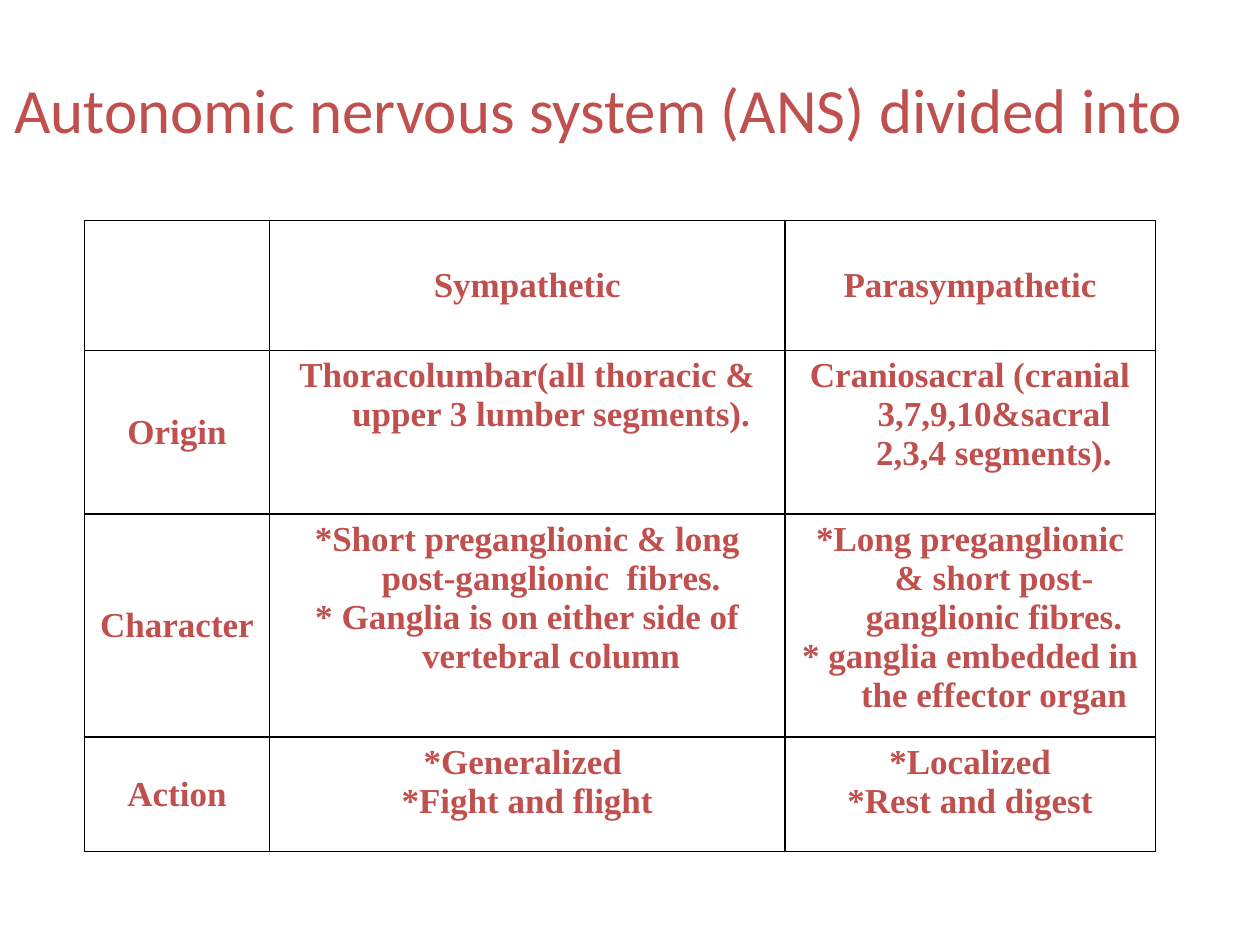
from lxml import etree
from pptx import Presentation
from pptx.dml.color import RGBColor
from pptx.enum.text import MSO_ANCHOR, PP_ALIGN
from pptx.oxml.ns import qn
from pptx.util import Inches, Pt

CENTER = PP_ALIGN.CENTER
MIDDLE, TOP = MSO_ANCHOR.MIDDLE, MSO_ANCHOR.TOP
RED = RGBColor(0xC0, 0x50, 0x4D)
BLACK = RGBColor(0, 0, 0)

COLUMN_WIDTHS = [1.47, 4.09, 2.94]
ROW_HEIGHTS = [1.03, 1.3, 1.77, 0.91]
ROWS = [
    ["", "Sympathetic", "Parasympathetic"],
    ["Origin",
     "Thoracolumbar(all thoracic & upper 3 lumber segments).",
     "Craniosacral (cranial 3,7,9,10&sacral 2,3,4 segments)."],
    ["Character",
     "*Short preganglionic & long post-ganglionic  fibres.\n"
     "* Ganglia is on either side of vertebral column",
     "*Long preganglionic & short post-ganglionic fibres.\n"
     "* ganglia embedded in the effector organ"],
    ["Action",
     "*Generalized \n*Fight and flight",
     "*Localized\n*Rest and digest"],
]


def format_paragraph(para, font_name, size, bold):
    para.alignment = CENTER
    for run in para.runs:
        run.font.name = font_name
        run.font.size = Pt(size)
        run.font.bold = bold
        run.font.color.rgb = RED


def add_borders(cell):
    properties = cell._tc.get_or_add_tcPr()
    for side in ("a:lnL", "a:lnR", "a:lnT", "a:lnB"):
        line = etree.SubElement(properties, qn(side), w=str(Pt(1)))
        fill = etree.SubElement(line, qn("a:solidFill"))
        etree.SubElement(fill, qn("a:srgbClr"), val=str(BLACK))


deck = Presentation()
deck.slide_width, deck.slide_height = Inches(10), Inches(7.5)
page = deck.slides.add_slide(deck.slide_layouts[5])

title = page.shapes.title
title.left, title.top = Inches(0), Inches(0.17)
title.width, title.height = Inches(9.5), Inches(1.38)
title.text_frame.text = "Autonomic nervous system (ANS) divided into"
title.text_frame.vertical_anchor = MIDDLE
format_paragraph(title.text_frame.paragraphs[0], "Calibri", 36, False)

table = page.shapes.add_table(
    len(ROWS), len(COLUMN_WIDTHS), Inches(0.67), Inches(1.75),
    Inches(sum(COLUMN_WIDTHS)), Inches(sum(ROW_HEIGHTS))).table
table.first_row = False
table.horz_banding = False
for column, width in zip(table.columns, COLUMN_WIDTHS):
    column.width = Inches(width)
for row, height in zip(table.rows, ROW_HEIGHTS):
    row.height = Inches(height)

for row_index, texts in enumerate(ROWS):
    for column_index, text in enumerate(texts):
        cell = table.cell(row_index, column_index)
        add_borders(cell)
        cell.fill.background()
        is_heading = row_index == 0 or column_index == 0
        cell.vertical_anchor = MIDDLE if is_heading else TOP
        cell.text_frame.text = text
        for para in cell.text_frame.paragraphs:
            format_paragraph(para, "Times New Roman", 20, True)
            indents = para._p.get_or_add_pPr()
            indents.set("marL", str(Inches(0.38)))
            indents.set("indent", str(Inches(-0.38)))

deck.save("out.pptx")
